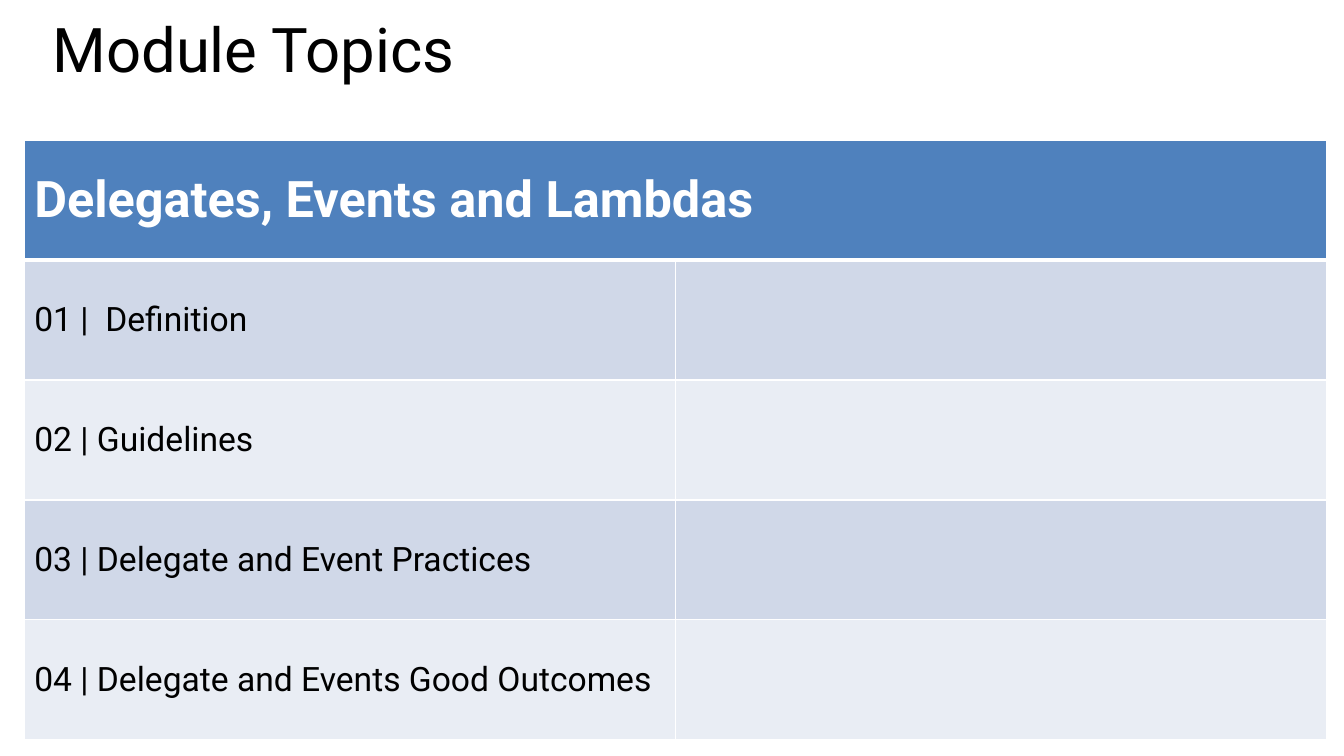
from lxml.etree import SubElement
from pptx import Presentation
from pptx.dml.color import RGBColor
from pptx.enum.text import MSO_ANCHOR, PP_ALIGN
from pptx.oxml.ns import qn
from pptx.util import Pt

PX = 9144  # EMU per px, 100 px to the inch
FONT = "Roboto"
BLACK = RGBColor(0x00, 0x00, 0x00)
WHITE = RGBColor(0xFF, 0xFF, 0xFF)
HEADER_BLUE = RGBColor(0x4F, 0x81, 0xBD)
BAND_DARK = RGBColor(0xD0, 0xD8, 0xE8)
BAND_LIGHT = RGBColor(0xE9, 0xED, 0xF4)

HEADING = "Delegates, Events and Lambdas"
TOPICS = [
    "01 |  Definition",
    "02 | Guidelines",
    "03 | Delegate and Event Practices",
    "04 | Delegate and Events Good Outcomes",
]
COLUMNS = 2
ROW_HEIGHT = 119


def px(length):
    return int(length * PX)


def add_run(paragraph, text, size, color, bold=False):
    run = paragraph.add_run()
    run.text = text
    run.font.name = FONT
    run.font.size = Pt(size)
    run.font.bold = bold
    run.font.color.rgb = color


def set_borders(cell, top, bottom):
    """Draw white cell borders, with widths in points; the sides are 1 pt."""
    properties = cell._tc.get_or_add_tcPr()
    for side, width in (("L", 1), ("R", 1), ("T", top), ("B", bottom)):
        border = SubElement(properties, qn(f"a:ln{side}"), w=str(Pt(width)))
        SubElement(SubElement(border, qn("a:solidFill")), qn("a:srgbClr"), val=str(WHITE))


def style_cell(cell, fill, top=1, bottom=1):
    set_borders(cell, top, bottom)
    cell.fill.solid()
    cell.fill.fore_color.rgb = fill
    cell.vertical_anchor = MSO_ANCHOR.MIDDLE


def add_title(slide, text):
    title = slide.shapes.title
    title.left, title.top, title.width, title.height = map(px, (42, 20, 1260, 116))
    frame = title.text_frame
    frame.word_wrap = True
    frame.vertical_anchor = MSO_ANCHOR.TOP
    paragraph = frame.paragraphs[0]
    paragraph.alignment = PP_ALIGN.LEFT
    paragraph.line_spacing = 0.8
    add_run(paragraph, text, 44, BLACK)


def add_topic_table(slide):
    row_count = len(TOPICS) + 1
    table = slide.shapes.add_table(
        row_count, COLUMNS, px(24), px(139), px(1292), px(ROW_HEIGHT * row_count)
    ).table

    for column in range(COLUMNS):
        style_cell(table.cell(0, column), HEADER_BLUE, bottom=3)
    header = table.cell(0, 0)
    header.merge(table.cell(0, COLUMNS - 1))
    add_run(header.text_frame.paragraphs[0], HEADING, 36, WHITE, bold=True)

    for row, topic in enumerate(TOPICS, start=1):
        band = BAND_DARK if row % 2 else BAND_LIGHT
        for column in range(COLUMNS):
            style_cell(table.cell(row, column), band, top=3 if row == 1 else 1)
        add_run(table.cell(row, 0).text_frame.paragraphs[0], topic, 24, BLACK)


def main():
    presentation = Presentation()
    presentation.slide_width = px(1333)
    presentation.slide_height = px(750)
    slide = presentation.slides.add_slide(presentation.slide_layouts[5])
    add_title(slide, "Module Topics")
    add_topic_table(slide)
    presentation.save("out.pptx")


if __name__ == "__main__":
    main()
